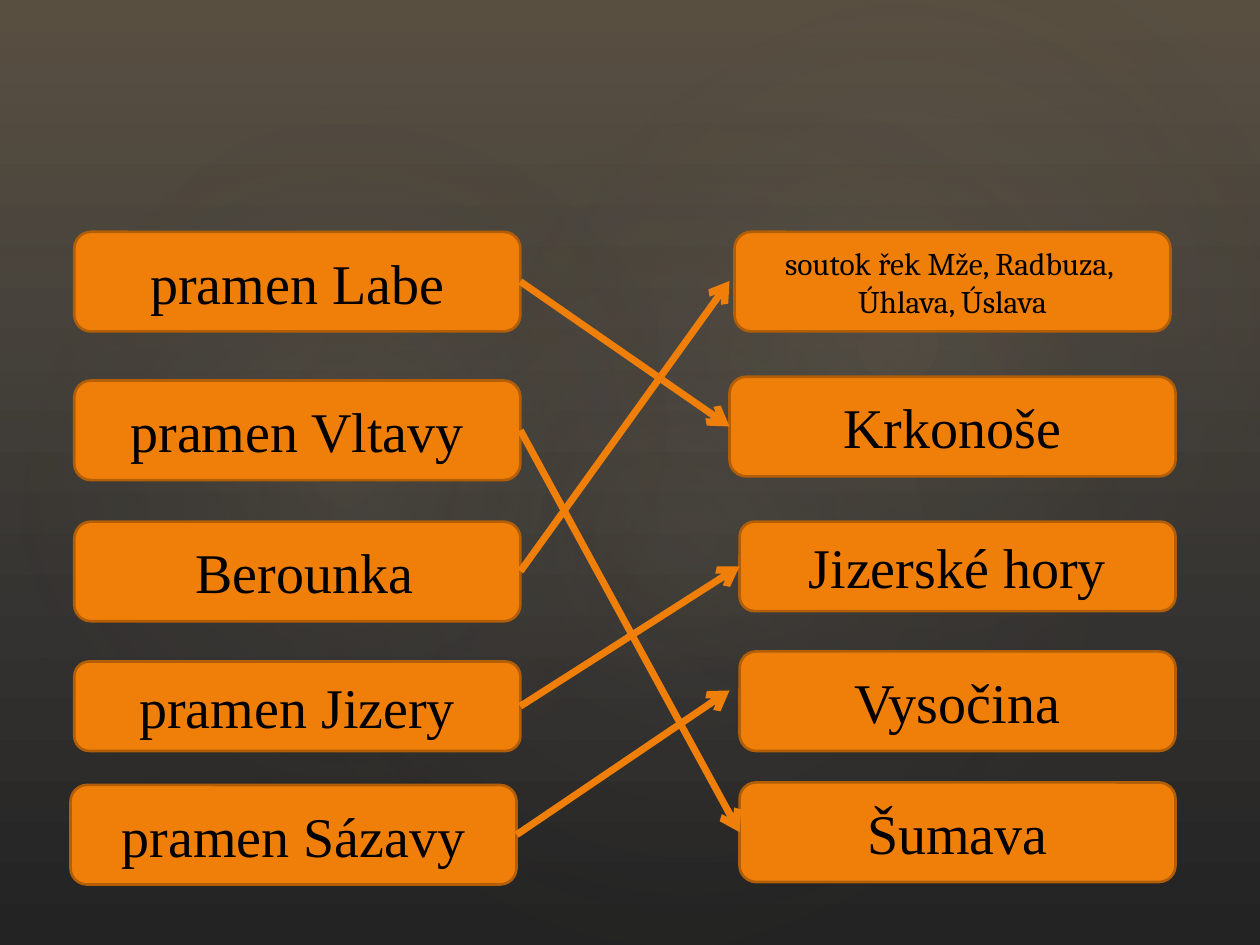
"""Build a slide that matches Czech rivers with the places where they rise."""
from pptx import Presentation
from pptx.dml.color import RGBColor
from pptx.enum.shapes import MSO_CONNECTOR, MSO_SHAPE
from pptx.enum.text import MSO_ANCHOR, PP_ALIGN
from pptx.oxml import parse_xml
from pptx.oxml.ns import nsdecls
from pptx.util import Inches, Pt

RECT, OVAL, ROUND = MSO_SHAPE.RECTANGLE, MSO_SHAPE.OVAL, MSO_SHAPE.ROUNDED_RECTANGLE
LINE, CENTER, MIDDLE = MSO_CONNECTOR.STRAIGHT, PP_ALIGN.CENTER, MSO_ANCHOR.MIDDLE
RIGHT, LEFT = 3, 1
ORANGE, BROWN, BLACK = "F07F09", "B25E07", "000000"
SERIF, SMALL = ("Times New Roman", 32), ("Cambria", 18)

BACK = ["515151", "222222"]
VEIL = [(0, "674D26", 36), (100, "323232", 10)]
DOWN = '<a:lin ang="5400000" scaled="0"/>'
ROUNDED = ('<a:path path="circle"><a:fillToRect l="50000" t="50000" '
           'r="50000" b="50000"/></a:path>')
GLOWS = [
    ((1.5, 1.14, 7.92, 6.24), 328.7, 7),
    ((-0.3, 1.28, 6.06, 4.9), 294.3, 8),
    ((3.58, 0.13, 7.09, 5.2), 328.7, 8),
]
RIVERS = [
    ("pramen Labe", (0.59, 1.84, 3.54, 0.79), SERIF),
    ("pramen Vltavy", (0.59, 3.02, 3.54, 0.79), SERIF),
    (" Berounka", (0.59, 4.14, 3.54, 0.79), SERIF),
    ("pramen Jizery", (0.59, 5.25, 3.54, 0.71), SERIF),
    ("pramen Sázavy", (0.56, 6.23, 3.54, 0.79), SERIF),
]
PLACES = [
    ("soutok řek Mže, Radbuza, \nÚhlava, Úslava", (5.83, 1.84, 3.46, 0.79), SMALL),
    ("Krkonoše", (5.79, 2.99, 3.54, 0.79), SERIF),
    ("Jizerské hory", (5.87, 4.14, 3.46, 0.71), SERIF),
    ("Vysočina", (5.87, 5.17, 3.46, 0.79), SERIF),
    ("Šumava", (5.87, 6.21, 3.46, 0.79), SERIF),
]
PAIRS = [(0, 1), (1, 4), (2, 0), (3, 2), (4, 3)]
LOOSE = {0: (5.79, 2.23), 3: (5.79, 5.48)}


def color(hue):
    """Turn a hex string into a colour."""
    return RGBColor.from_string(hue)


def add_form(slide, kind, at):
    """Add a preset shape without a shadow."""
    form = slide.shapes.add_shape(kind, *map(Inches, at))
    form.shadow.inherit = False
    return form


def add_haze(slide, kind, at, stops, way):
    """Add a borderless shape with a translucent gradient."""
    form = add_form(slide, kind, at)
    form.line.fill.background()
    form.fill.background()
    marks = "".join(
        f'<a:gs pos="{pos * 1000}"><a:srgbClr val="{hue}">'
        f'<a:alpha val="{alpha * 1000}"/></a:srgbClr></a:gs>'
        for pos, hue, alpha in stops)
    grad = parse_xml(f'<a:gradFill {nsdecls("a")} rotWithShape="1">'
                     f'<a:gsLst>{marks}</a:gsLst>{way}</a:gradFill>')
    props = form._element.spPr
    props.replace(props.find("{*}noFill"), grad)
    return form


def add_box(slide, text, at, style):
    """Add an orange box with centred text."""
    box = add_form(slide, ROUND, at)
    box.fill.solid()
    box.fill.fore_color.rgb = color(ORANGE)
    box.line.color.rgb = color(BROWN)
    box.line.width = Pt(1.5)
    frame = box.text_frame
    frame.text = text
    frame.word_wrap = True
    frame.vertical_anchor = MIDDLE
    for para in frame.paragraphs:
        para.alignment = CENTER
        for run in para.runs:
            run.font.name, size = style
            run.font.size = Pt(size)
            run.font.color.rgb = color(BLACK)
    return box


def add_arrow(slide, start, goal, end):
    """Join two boxes, or stop at a loose end point."""
    x, y = map(Inches, end or (0, 0))
    arrow = slide.shapes.add_connector(LINE, 0, 0, x, y)
    arrow.begin_connect(start, RIGHT)
    if not end:
        arrow.end_connect(goal, LEFT)
    arrow.line.color.rgb = color(ORANGE)
    arrow.line.width = Pt(4)
    arrow.line._get_or_add_ln().append(
        parse_xml(f'<a:tailEnd {nsdecls("a")} type="arrow"/>'))
    arrow._element.spPr.append(parse_xml(f'<a:effectLst {nsdecls("a")}/>'))


def main():
    """Draw the backdrop, the boxes and the arrows."""
    deck = Presentation()
    deck.slide_width, deck.slide_height = Inches(10), Inches(7.5)
    slide = deck.slides.add_slide(deck.slide_layouts[6])
    fill = slide.background.fill
    fill.gradient()
    fill.gradient_angle = 270
    for stop, hue in zip(fill.gradient_stops, BACK):
        stop.color.rgb = color(hue)
    add_haze(slide, RECT, (0, 0, 10, 7.5), VEIL, DOWN)
    for at, turn, alpha in GLOWS:
        stops = [(0, "DAC19B", alpha), (58, "323232", 0)]
        add_haze(slide, OVAL, at, stops, ROUNDED).rotation = turn
    rivers = [add_box(slide, *row) for row in RIVERS]
    places = [add_box(slide, *row) for row in PLACES]
    for a, b in PAIRS:
        add_arrow(slide, rivers[a], places[b], LOOSE.get(b))
    deck.save("out.pptx")


if __name__ == "__main__":
    main()
